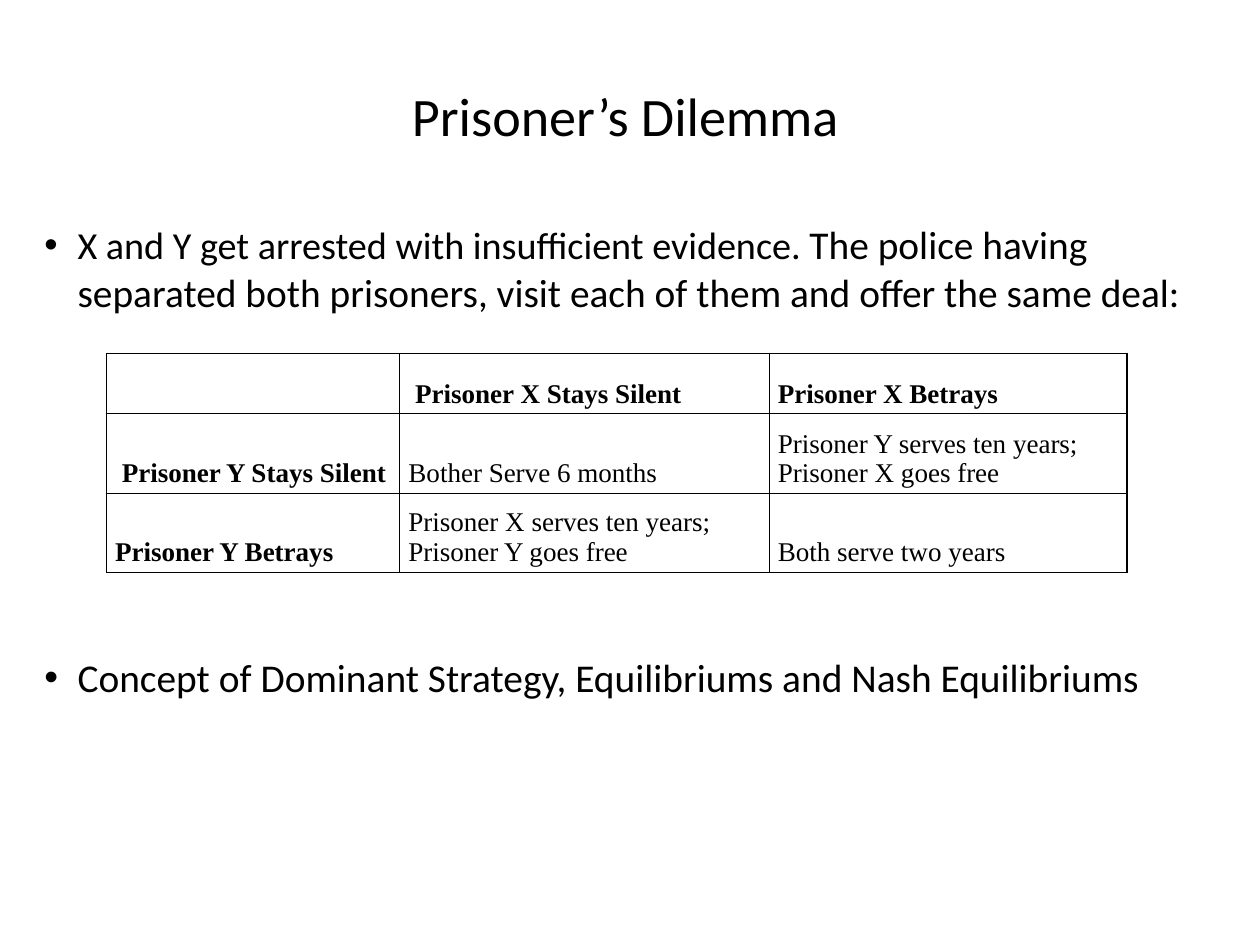
from dataclasses import dataclass

from lxml.etree import SubElement
from pptx import Presentation
from pptx.dml.color import RGBColor
from pptx.enum.text import MSO_ANCHOR, MSO_AUTO_SIZE, PP_ALIGN
from pptx.oxml.ns import qn
from pptx.util import Inches, Pt

BLACK = "000000"
HANGING = 0.38


@dataclass
class Entry:
    lines: tuple[str, ...] = ()
    bold: bool = False


PAYOFFS = [
    [Entry(), Entry((" Prisoner X Stays Silent",), True), Entry(("Prisoner X Betrays",), True)],
    [
        Entry((" Prisoner Y Stays Silent",), True),
        Entry(("Bother Serve 6 months",)),
        Entry(("Prisoner Y serves ten years;", "Prisoner X goes free")),
    ],
    [
        Entry(("Prisoner Y Betrays",), True),
        Entry(("Prisoner X serves ten years;", "Prisoner Y goes free")),
        Entry(("Both serve two years",)),
    ],
]
COLUMN_WIDTHS = [3.31, 4.17, 4.04]
ROW_HEIGHTS = [0.68, 0.9, 0.89]


def color(value: str) -> RGBColor:
    return RGBColor.from_string(value)


def add_text(para, text: str, *, size: float, font: str = "Calibri", bold: bool = False) -> None:
    span = para.add_run()
    span.text = text
    span.font.size = Pt(size)
    span.font.name = font
    span.font.bold = bold
    span.font.color.rgb = color(BLACK)


def place(box, left: float, top: float, width: float, height: float) -> None:
    box.left, box.top = Inches(left), Inches(top)
    box.width, box.height = Inches(width), Inches(height)
    box.text_frame.auto_size = MSO_AUTO_SIZE.NONE
    box.text_frame.word_wrap = True


def add_borders(cell) -> None:
    properties = cell._tc.get_or_add_tcPr()
    for side in ("a:lnL", "a:lnR", "a:lnT", "a:lnB"):
        line = SubElement(properties, qn(side), w=str(Pt(1)))
        fill = SubElement(line, qn("a:solidFill"))
        SubElement(fill, qn("a:srgbClr"), val=BLACK)


def fill_cell(cell, entry: Entry) -> None:
    add_borders(cell)
    cell.fill.background()
    cell.vertical_anchor = MSO_ANCHOR.BOTTOM
    frame = cell.text_frame
    for index, text in enumerate(entry.lines):
        para = frame.add_paragraph() if index else frame.paragraphs[0]
        properties = para._p.get_or_add_pPr()
        properties.set("marL", str(Inches(HANGING)))
        properties.set("indent", str(Inches(-HANGING)))
        add_text(para, text, size=22, font="Times New Roman", bold=entry.bold)


def add_payoff_table(page) -> None:
    frame = page.shapes.add_table(
        len(ROW_HEIGHTS), len(COLUMN_WIDTHS), Inches(1.2), Inches(3.99),
        Inches(sum(COLUMN_WIDTHS)), Inches(sum(ROW_HEIGHTS)),
    )
    table = frame.table
    table.first_row = False
    table.horz_banding = False
    for column, width in zip(table.columns, COLUMN_WIDTHS):
        column.width = Inches(width)
    for row, height, entries in zip(table.rows, ROW_HEIGHTS, PAYOFFS):
        row.height = Inches(height)
        for cell, entry in zip(row.cells, entries):
            fill_cell(cell, entry)


def main() -> None:
    deck = Presentation()
    deck.slide_width, deck.slide_height = Inches(14.22), Inches(10.67)
    page = deck.slides.add_slide(deck.slide_layouts[1])

    title = page.shapes.title
    place(title, 0.4, 0.42, 13.32, 1.75)
    heading = title.text_frame.paragraphs[0]
    heading.alignment = PP_ALIGN.CENTER
    add_text(heading, "Prisoner’s Dilemma", size=44)

    body = page.placeholders[1]
    place(body, 0.4, 2.44, 13.4, 6.91)
    story = body.text_frame.paragraphs[0]
    add_text(story, "X and Y get arrested with insufficient evidence.", size=31)
    add_text(
        story,
        " The police having separated both prisoners, visit each of them and offer the same deal:",
        size=32,
    )
    concept = body.text_frame.add_paragraph()
    concept.space_before = Pt(275)
    add_text(concept, "Concept of Dominant Strategy, Equilibriums and Nash Equilibriums", size=32)

    add_payoff_table(page)
    deck.save("out.pptx")


if __name__ == "__main__":
    main()
